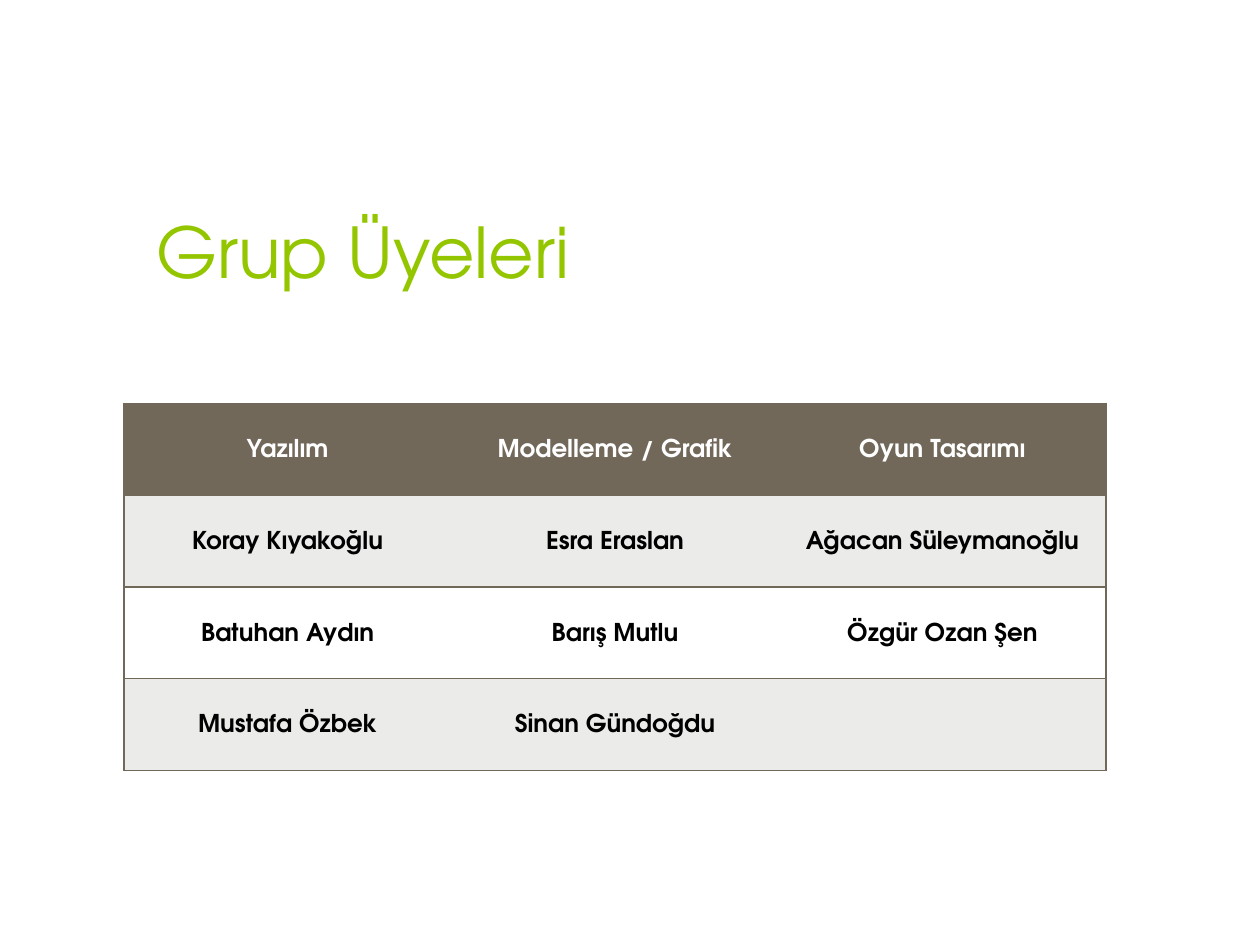
from lxml import etree
from pptx import Presentation
from pptx.dml.color import RGBColor
from pptx.enum.text import MSO_ANCHOR, MSO_AUTO_SIZE, PP_ALIGN
from pptx.oxml.ns import qn
from pptx.util import Cm, Pt

FONT = "TeX Gyre Adventor"
GREEN = RGBColor(0x94, 0xC6, 0x00)
BROWN = RGBColor(0x71, 0x68, 0x5A)
GREY = RGBColor(0xEB, 0xEB, 0xEA)
WHITE = RGBColor(0xFF, 0xFF, 0xFF)
BLACK = RGBColor(0x00, 0x00, 0x00)
LEFT, CENTER = PP_ALIGN.LEFT, PP_ALIGN.CENTER
BOTTOM, MIDDLE = MSO_ANCHOR.BOTTOM, MSO_ANCHOR.MIDDLE
NO_AUTOFIT = MSO_AUTO_SIZE.NONE

TITLE_BOX = (Cm(2.9), Cm(2.84), Cm(19.51), Cm(3.18))
TABLE_BOX = (Cm(2.5), Cm(8.13), Cm(19.8), Cm(7.4))
MEMBERS = [
    ["Yazılım", "Modelleme / Grafik", "Oyun Tasarımı"],
    ["Koray Kıyakoğlu", "Esra Eraslan", "Ağacan Süleymanoğlu"],
    ["Batuhan Aydın", "Barış Mutlu", "Özgür Ozan Şen"],
    ["Mustafa Özbek", "Sinan Gündoğdu", ""],
]


def set_attributes(target, **values):
    for name, value in values.items():
        setattr(target, name, value)


def format_paragraph(p, size, color, bold, align, spacing):
    set_attributes(p, alignment=align, line_spacing=spacing)
    set_attributes(p.font, name=FONT, size=Pt(size), bold=bold)
    p.font.color.rgb = color


def add_title(slide, box, text):
    title = slide.shapes.title
    set_attributes(title, **dict(zip(("left", "top", "width", "height"), box)))
    tf = title.text_frame
    set_attributes(tf, text=text, vertical_anchor=BOTTOM, word_wrap=True,
                   auto_size=NO_AUTOFIT)
    format_paragraph(tf.paragraphs[0], 40, GREEN, False, LEFT, 1.0)


def set_borders(cell, visible):
    """Draw the sides named in visible and clear the others."""
    tc_pr = cell._tc.get_or_add_tcPr()
    for i, side in enumerate("LRTB"):
        ln = etree.Element(qn(f"a:ln{side}"), w=str(Pt(1)))
        if side in visible:
            fill = etree.SubElement(ln, qn("a:solidFill"))
            etree.SubElement(fill, qn("a:srgbClr"), val=str(BROWN))
        else:
            etree.SubElement(ln, qn("a:noFill"))
        tc_pr.insert(i, ln)


def add_member_table(slide, box, rows):
    n_rows, n_cols = len(rows), len(rows[0])
    table = slide.shapes.add_table(n_rows, n_cols, *box).table
    for r, names in enumerate(rows):
        table.rows[r].height = box[3] // n_rows
        for c, name in enumerate(names):
            cell = table.cell(r, c)
            set_attributes(cell, text=name, vertical_anchor=MIDDLE,
                           margin_left=Cm(0.18), margin_right=Cm(0.18),
                           margin_top=0, margin_bottom=0)
            color = BLACK if r else WHITE
            format_paragraph(cell.text_frame.paragraphs[0], 14, color, True,
                             CENTER, 1.15)
            cell.fill.solid()
            banding = GREY if r % 2 else WHITE
            cell.fill.fore_color.rgb = banding if r else BROWN
            outer = ("L" if c == 0 else "") + ("R" if c == n_cols - 1 else "")
            set_borders(cell, "TB" + outer)


def main():
    prs = Presentation()
    set_attributes(prs, slide_width=Cm(25.4), slide_height=Cm(19.05))
    slide = prs.slides.add_slide(prs.slide_layouts[5])
    add_title(slide, TITLE_BOX, "Grup Üyeleri")
    add_member_table(slide, TABLE_BOX, MEMBERS)
    prs.save("out.pptx")


if __name__ == "__main__":
    main()
